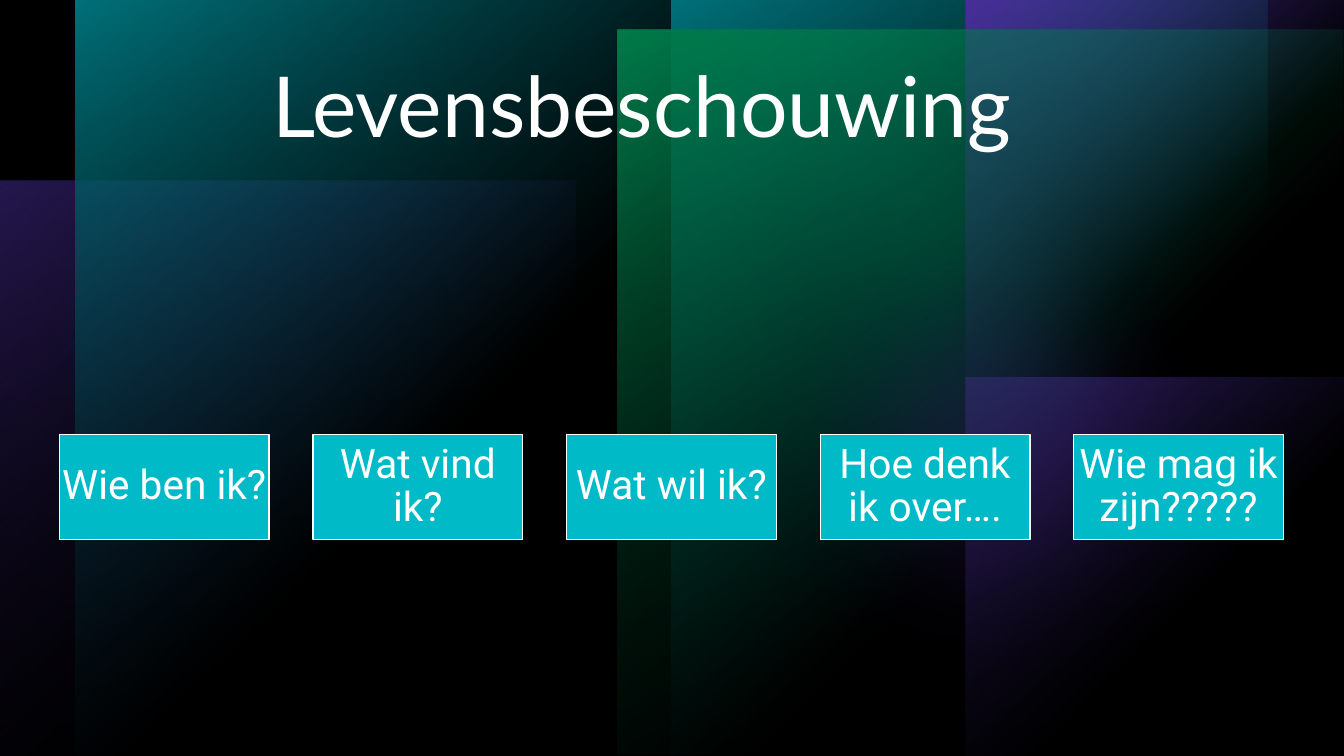
from pptx import Presentation
from pptx.dml.color import RGBColor
from pptx.enum.shapes import MSO_SHAPE
from pptx.enum.text import MSO_ANCHOR, PP_ALIGN
from pptx.oxml import parse_xml
from pptx.oxml.ns import nsdecls
from pptx.util import Inches, Pt

BLACK = RGBColor(0x00, 0x00, 0x00)
WHITE = RGBColor(0xFF, 0xFF, 0xFF)
TEAL = RGBColor(0x00, 0xBA, 0xC8)
PURPLE = RGBColor(0x79, 0x4D, 0xFF)
GREEN = RGBColor(0x00, 0xD1, 0x7D)

FROM_CORNER = '<a:path path="circle"><a:fillToRect r="100000" b="100000"/></a:path>'
DOWNWARD = '<a:lin ang="5400000" scaled="0"/>'

prs = Presentation()
prs.slide_width, prs.slide_height = Inches(13.33), Inches(7.5)
slide = prs.slides.add_slide(prs.slide_layouts[6])
slide.background.fill.solid()
slide.background.fill.fore_color.rgb = BLACK


def add_panel(preset, box, color):
    panel = slide.shapes.add_shape(preset, *[Inches(v) for v in box])
    panel.shadow.inherit = False
    panel.fill.solid()
    panel.fill.fore_color.rgb = color
    panel.line.fill.background()
    return panel


def fade(panel, color, stops, direction):
    stop_xml = "".join(
        f'<a:gs pos="{position * 1000}"><a:srgbClr val="{color}">'
        f'<a:alpha val="{opacity * 1000}"/></a:srgbClr></a:gs>'
        for position, opacity in stops)
    gradient = parse_xml(
        f'<a:gradFill {nsdecls("a")} rotWithShape="0"><a:gsLst>{stop_xml}</a:gsLst>'
        f'{direction}</a:gradFill>')
    properties = panel.fill._xPr
    properties.replace(properties.solidFill, gradient)


glows = [
    ((6.98, 0, 4.72, 4.72), GREEN, 96),
    ((6.69, 1.35, 6.02, 6.02), PURPLE, 60),
]
light_panels = [
    ((6.66, 0, 5.91, 7.5), TEAL, 100),
    ((0.75, 0, 5.91, 7.5), TEAL, 100),
    ((9.58, 3.75, 3.75, 3.75), PURPLE, 100),
    ((9.58, 0, 3.75, 3.75), PURPLE, 100),
    ((6.13, 0.29, 7.2, 7.21), GREEN, 100),
]

left_panel = add_panel(MSO_SHAPE.RECTANGLE, (0, 1.79, 5.71, 5.71), PURPLE)
fade(left_panel, PURPLE, [(0, 60), (60, 0)], FROM_CORNER)

for box, color, opacity in glows:
    glow = add_panel(MSO_SHAPE.OVAL, box, color)
    fade(glow, color, [(0, opacity), (100, opacity)], DOWNWARD)
    glow._element.spPr.effectLst.append(
        parse_xml(f'<a:softEdge {nsdecls("a")} rad="{Pt(100)}"/>')
    ) if hasattr(glow._element.spPr, "effectLst") else None

for box, color, opacity in light_panels:
    light_panel = add_panel(MSO_SHAPE.RECTANGLE, box, color)
    fade(light_panel, color, [(0, opacity), (60, 0)], FROM_CORNER)

shade = add_panel(MSO_SHAPE.RECTANGLE, (0, 0, 13.33, 7.5), BLACK)
fade(shade, BLACK, [(0, 40), (100, 80)], DOWNWARD)

title = slide.shapes.add_textbox(Inches(0.6), Inches(0.59), Inches(12.11), Inches(1.98))
title.text_frame.word_wrap = True
heading = title.text_frame.paragraphs[0]
heading.text = "Levensbeschouwing"
heading.line_spacing = 0.9
heading.font.size = Pt(60)
heading.font.name = "Lato"
heading.font.color.rgb = WHITE
heading._p.get_or_add_pPr().set("marL", str(Inches(2)))

questions = ["Wie ben ik?", "Wat vind ik?", "Wat wil ik?", "Hoe denk ik over….", "Wie mag ik zijn?????"]
card_left, card_step = 0.59, 2.515
for index, question in enumerate(questions):
    card = add_panel(MSO_SHAPE.RECTANGLE, (card_left + index * card_step, 4.31, 2.08, 1.04), TEAL)
    card.line.color.rgb = WHITE
    card.line.width = Pt(1)
    frame = card.text_frame
    frame.word_wrap = True
    frame.vertical_anchor = MSO_ANCHOR.MIDDLE
    for side in ("left", "top", "right", "bottom"):
        setattr(frame, f"margin_{side}", Inches(0.02))
    paragraph = frame.paragraphs[0]
    paragraph.text = question
    paragraph.alignment = PP_ALIGN.CENTER
    paragraph.line_spacing = 0.9
    paragraph.font.size = Pt(29)
    paragraph.font.name = "Roboto"
    paragraph.font.color.rgb = WHITE

prs.save("out.pptx")
